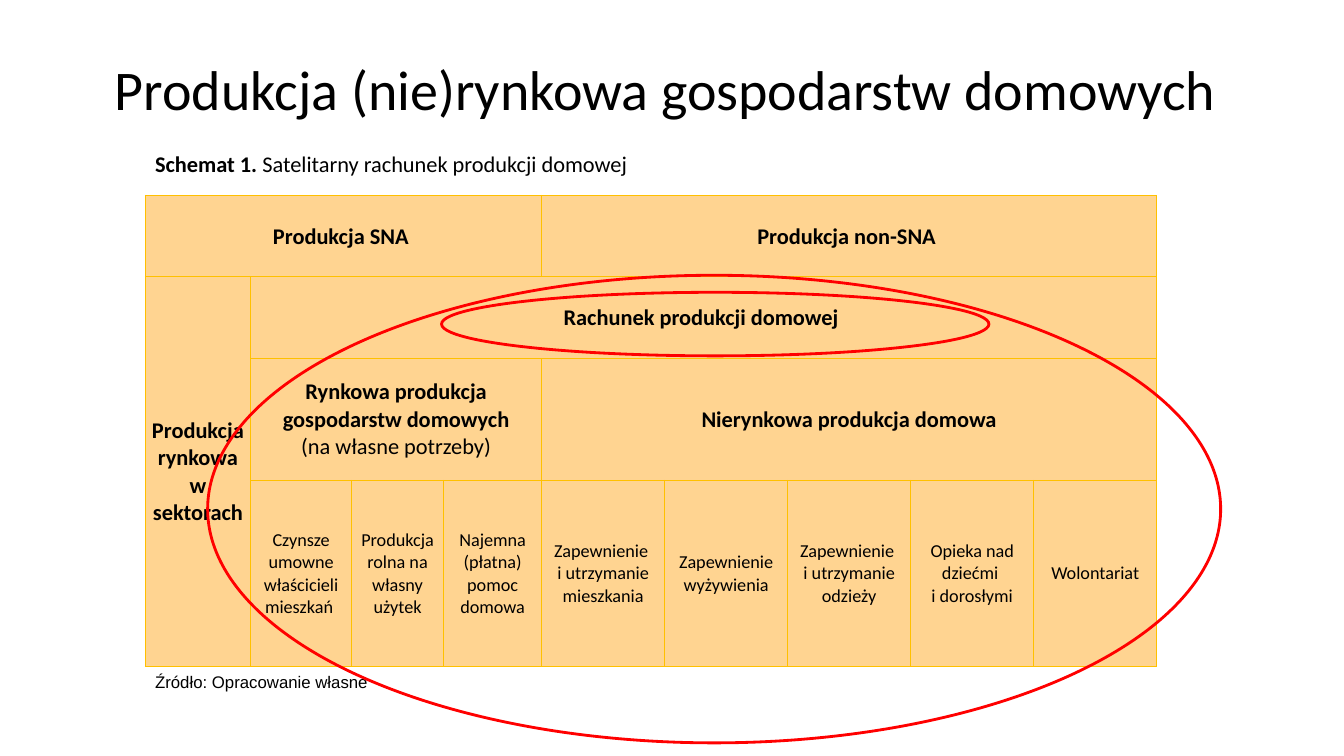
"""Builds the slide on market and non-market household production."""
from lxml.etree import SubElement
from pptx import Presentation
from pptx.dml.color import RGBColor
from pptx.enum.shapes import MSO_SHAPE as Shape
from pptx.enum.text import MSO_ANCHOR as Anchor, PP_ALIGN as Align
from pptx.oxml.ns import qn
from pptx.util import Pt


def color(value):
    return RGBColor.from_string(value)


def write(paragraph, text, size=16, bold=False, font="Calibri", ink="000000"):
    for index, line in enumerate(text.split("\n")):
        if index:
            paragraph.add_line_break()
        run = paragraph.add_run()
        run.text = line
        run.font.size = Pt(size)
        run.font.bold = bold
        run.font.name = font
        run.font.color.rgb = color(ink)


class SchemeSlide:
    cell_fill = "FFD491"
    border = "FFC000"
    highlight = "FF0000"

    def __init__(self, slide):
        self.slide = slide

    def textbox(self, left, top, width, height, anchor=Anchor.TOP):
        box = self.slide.shapes.add_textbox(Pt(left), Pt(top), Pt(width), Pt(height))
        frame = box.text_frame
        frame.word_wrap = True
        frame.vertical_anchor = anchor
        return frame.paragraphs[0]

    def table(self, left, top, widths, heights):
        grid = self.slide.shapes.add_table(
            len(heights), len(widths), Pt(left), Pt(top),
            Pt(sum(widths)), Pt(sum(heights))).table
        for column, width in zip(grid.columns, widths):
            column.width = Pt(width)
        for row, height in zip(grid.rows, heights):
            row.height = Pt(height)
        for cell in grid.iter_cells():
            self.style_cell(cell)
        return grid

    def style_cell(self, cell):
        cell.margin_left = cell.margin_right = cell.margin_top = Pt(0.7)
        cell.margin_bottom = 0
        cell.vertical_anchor = Anchor.MIDDLE
        properties = cell._tc.get_or_add_tcPr()
        for side in ("a:lnL", "a:lnR", "a:lnT", "a:lnB"):
            line = SubElement(properties, qn(side), w=str(Pt(0.5)))
            solid = SubElement(line, qn("a:solidFill"))
            SubElement(solid, qn("a:srgbClr"), val=self.border)
        cell.fill.solid()
        cell.fill.fore_color.rgb = color(self.cell_fill)

    def fill_cell(self, grid, row, column, paragraphs, rows=1, columns=1, size=16):
        cell = grid.cell(row, column)
        if rows > 1 or columns > 1:
            cell.merge(grid.cell(row + rows - 1, column + columns - 1))
        frame = cell.text_frame
        for index, (text, bold) in enumerate(paragraphs):
            paragraph = frame.add_paragraph() if index else frame.paragraphs[0]
            paragraph.alignment = Align.CENTER
            write(paragraph, text, size=size, bold=bold)

    def ellipse(self, left, top, width, height):
        ring = self.slide.shapes.add_shape(
            Shape.OVAL, Pt(left), Pt(top), Pt(width), Pt(height))
        ring.shadow.inherit = False
        ring.fill.background()
        ring.line.color.rgb = color(self.highlight)
        ring.line.width = Pt(2)


def main():
    deck = Presentation()
    deck.slide_width, deck.slide_height = Pt(960), Pt(540)
    scheme = SchemeSlide(deck.slides.add_slide(deck.slide_layouts[6]))

    title = scheme.textbox(75, 13.5, 828, 104.4, Anchor.MIDDLE)
    title.line_spacing = 0.9
    write(title, "Produkcja (nie)rynkowa gospodarstw domowych", size=40)

    caption = scheme.textbox(103.7, 105.8, 828, 30)
    caption.line_spacing = 0.9
    write(caption, "Schemat 1. ", bold=True)
    write(caption, "Satelitarny rachunek produkcji domowej")

    source = scheme.textbox(103.7, 476, 692.6, 21.8, Anchor.MIDDLE)
    source.alignment = Align.JUSTIFY
    write(source, "Źródło: Opracowanie własne", size=12, font="Arial")

    account = scheme.table(103.7, 139.5, [75.4, 72, 65.8, 70] + [87.9] * 5,
                           [58.2, 58.2, 87.1, 133])
    sections = [
        (0, 0, 1, 4, [("Produkcja SNA ", True)]),
        (0, 4, 1, 5, [("Produkcja non-SNA ", True)]),
        (1, 0, 3, 1, [("Produkcja rynkowa", True), ("w sektorach", True)]),
        (1, 1, 1, 8, [("Rachunek produkcji domowej ", True)]),
        (2, 1, 1, 3, [("Rynkowa produkcja gospodarstw domowych", True),
                      ("(na własne potrzeby)", False)]),
        (2, 4, 1, 5, [("Nierynkowa produkcja domowa", True)]),
    ]
    for row, column, rows, columns, paragraphs in sections:
        scheme.fill_cell(account, row, column, paragraphs, rows, columns)

    activities = [
        "Czynsze umowne właścicieli mieszkań ",
        "Produkcja rolna na własny użytek",
        "Najemna (płatna) pomoc domowa",
        "Zapewnienie \ni utrzymanie mieszkania",
        "Zapewnienie wyżywienia",
        "Zapewnienie \ni utrzymanie odzieży",
        "Opieka nad dziećmi \ni dorosłymi",
        "Wolontariat",
    ]
    for column, activity in enumerate(activities, start=1):
        scheme.fill_cell(account, 3, column, [(activity, False)], size=13)

    scheme.ellipse(315.4, 208.8, 391, 45.4)
    scheme.ellipse(148.3, 196.6, 723.6, 334)
    deck.save("out.pptx")


if __name__ == "__main__":
    main()
